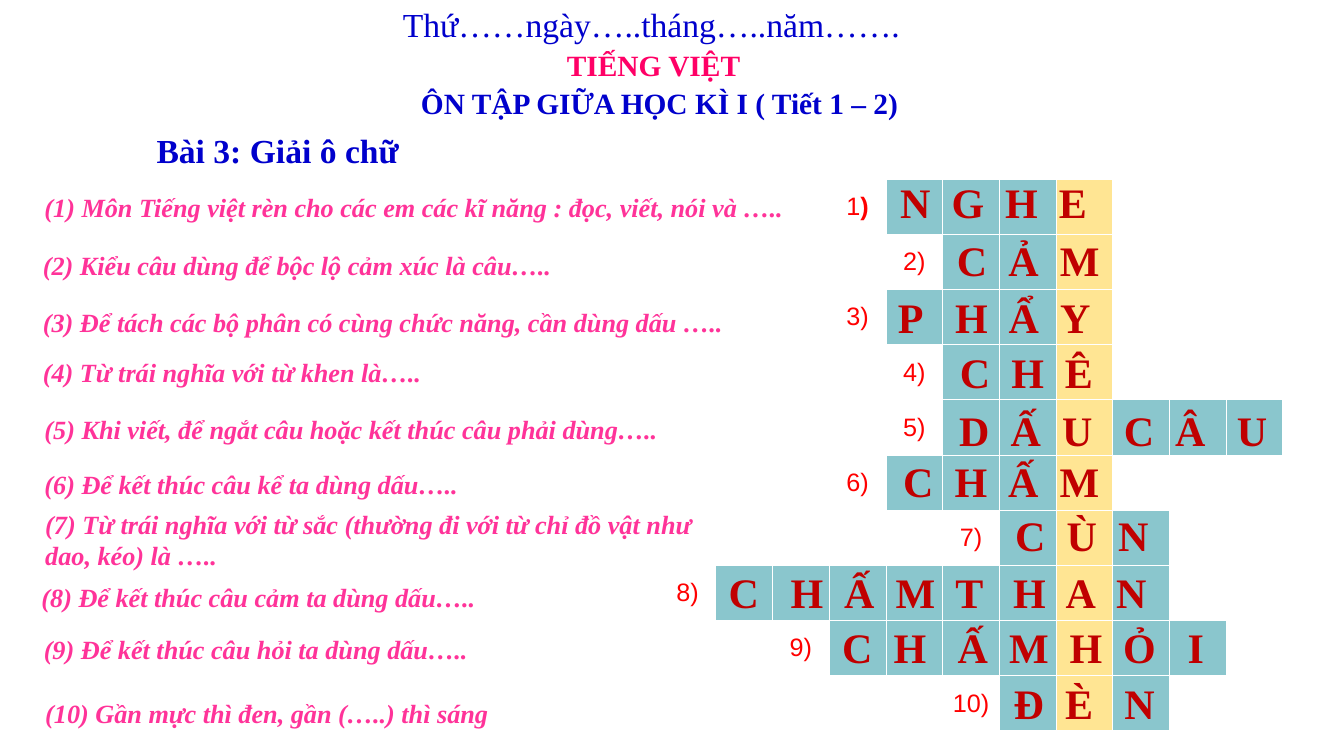
from lxml import etree
from pptx import Presentation
from pptx.dml.color import RGBColor
from pptx.enum.text import MSO_ANCHOR, PP_ALIGN
from pptx.oxml.ns import qn
from pptx.util import Pt

LEFT, CENTER = PP_ALIGN.LEFT, PP_ALIGN.CENTER
MIDDLE = MSO_ANCHOR.MIDDLE
SERIF, SANS = "Times New Roman", "Arial"
WHITE, TEAL, YELLOW = "FFFFFF", "8AC6CD", "FFE593"
BLUE, ROSE, PINK, RED, DARK_RED = "0000CC", "FF0066", "FF3399", "FF0000", "C00000"


def rgb(value):
    return RGBColor.from_string(value)


def add_text(s, text, x, y, w, h, size, color, bold=True, italic=False, align=LEFT, stops=()):
    sp = s.shapes.add_textbox(Pt(x), Pt(y), Pt(w), Pt(h))
    tf = sp.text_frame
    tf.word_wrap = True
    p = tf.paragraphs[0]
    p.alignment = align
    if stops:
        tabs = etree.SubElement(p._p.get_or_add_pPr(), qn("a:tabLst"))
        for stop in stops:
            etree.SubElement(tabs, qn("a:tab"), pos=str(Pt(stop)), algn="l")
    r = p.add_run()
    r.text = text
    r.font.name = SERIF
    r.font.size = Pt(size)
    r.font.bold = bold
    r.font.italic = italic
    r.font.color.rgb = rgb(color)


prs = Presentation()
prs.slide_width, prs.slide_height = Pt(1280), Pt(720)
s = prs.slides.add_slide(prs.slide_layouts[6])

add_text(s, "Bài 3: Giải ô chữ", 142, 120, 281, 46, 32, BLUE)

answers = [
    ("NGHE", 3, 850.3, 165, [49, 100, 151]),
    ("CẢM", 4, 904.3, 219.6, [49, 98]),
    ("PHẨY", 3, 848, 274.3, [54.5, 105.5, 154.5]),
    ("CHÊ", 4, 907.2, 326.2, [49, 100]),
    ("DẤUCÂU", 4, 906.5, 381.6, [49, 98, 156.7, 205.6, 264.5]),
    ("CHẤM", 3, 853, 430.6, [49, 100, 149]),
    ("CÙN", 5, 959.8, 481.7, [49, 98]),
    ("CHẤMTHAN", 0, 686.9, 536.4, [59, 110, 159, 216, 271, 321, 369]),
    ("CHẤMHỎI", 2, 794.9, 588.2, [49, 110, 159, 216.7, 267.8, 329]),
    ("ĐÈN", 5, 958.3, 641.5, [49, 105.5]),
]

COLS, KEY_COL, CELL_W, CELL_H = 11, 7, 54, 52.56
table = s.shapes.add_table(len(answers), COLS, Pt(627.8), Pt(170.6),
                           Pt(COLS * CELL_W), Pt(len(answers) * CELL_H)).table
table.first_row = table.horz_banding = False
for col in table.columns:
    col.width = Pt(CELL_W)
for i, (word, label_col, *_) in enumerate(answers):
    table.rows[i].height = Pt(CELL_H)
    for j in range(COLS):
        cell = table.cell(i, j)
        cell.vertical_anchor = MIDDLE
        tcPr = cell._tc.get_or_add_tcPr()
        for side in ("a:lnL", "a:lnR", "a:lnT", "a:lnB"):
            ln = etree.SubElement(tcPr, qn(side), w=str(Pt(1)))
            fill = etree.SubElement(ln, qn("a:solidFill"))
            etree.SubElement(fill, qn("a:srgbClr"), val=WHITE)
        in_word = label_col < j <= label_col + len(word)
        cell.fill.solid()
        cell.fill.fore_color.rgb = rgb(WHITE if not in_word else YELLOW if j == KEY_COL else TEAL)
        if j == label_col:
            p = cell.text_frame.paragraphs[0]
            p.alignment = CENTER
            for part, bold in ((str(i + 1), False), (")", i == 0)):
                r = p.add_run()
                r.text = part
                r.font.name = SANS
                r.font.size = Pt(24)
                r.font.bold = bold
                r.font.color.rgb = rgb(RED)

add_text(s, "TIẾNG VIỆT", 532.8, 41.8, 185, 41, 28, ROSE)
add_text(s, "Thứ……ngày…..tháng…..năm…….", 376.6, 0, 500, 46, 32, BLUE, bold=False)
add_text(s, "ÔN TẬP GIỮA HỌC KÌ I ( Tiết 1 – 2)", 391, 77.8, 474, 41, 28, BLUE, align=CENTER)

clues = [
    ("(1) Môn Tiếng việt rèn cho các em các kĩ năng : đọc, viết, nói và …..", 35.3, 178.6, 731),
    ("(2) Kiểu câu dùng để bộc lộ cảm xúc là câu…..", 33.8, 234, 654),
    ("(3) Để tách các bộ phân có cùng chức năng, cần dùng dấu …..", 33.8, 288, 690),
    ("(4) Từ trái nghĩa với từ khen là…..", 33.8, 336.2, 654),
    ("(5) Khi viết, để ngắt câu hoặc kết thúc câu phải dùng…..", 35.3, 390.2, 654),
    ("(6) Để kết thúc câu kể ta dùng dấu…..", 35.3, 442, 654),
    ("(7) Từ trái nghĩa với từ sắc (thường đi với từ chỉ đồ vật như dao, kéo) là …..", 36, 480.2, 654),
    ("(8) Để kết thúc câu cảm ta dùng dấu…..", 32.4, 550, 608),
    ("(9) Để kết thúc câu hỏi ta dùng dấu…..", 34.6, 599.8, 608),
    ("(10) Gần mực thì đen, gần (…..) thì sáng", 36, 660.2, 608),
]
for clue, x, y, w in clues:
    add_text(s, clue, x, y, w, 37.4, 25, PINK, italic=True)

for word, _, x, y, stops in answers:
    add_text(s, "\t".join(word), x, y, stops[-1] + 60, 55.4, 40, DARK_RED, stops=stops)

prs.save("out.pptx")
